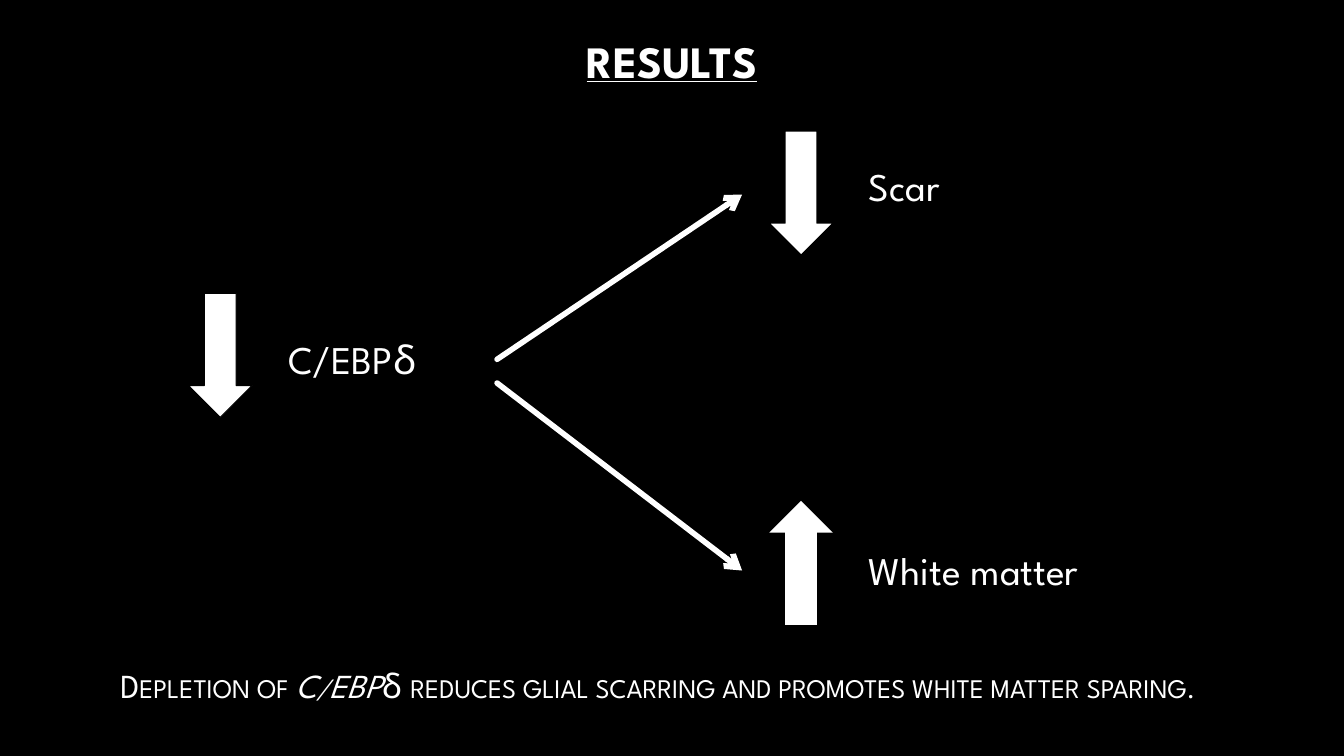
"""Build the results slide: one cause leading to two outcomes, with a conclusion."""
import collections

import lxml.etree
import pptx
import pptx.dml.color
import pptx.enum.shapes
import pptx.enum.text
import pptx.oxml
import pptx.oxml.ns
import pptx.util

WHITE = pptx.dml.color.RGBColor(0xFF, 0xFF, 0xFF)
BLACK = pptx.dml.color.RGBColor(0x00, 0x00, 0x00)
FONT = "League Spartan"
SLIDE_WIDTH, SLIDE_HEIGHT = 13.33, 7.5
ARROW_WIDTH, ARROW_HEIGHT = 0.63, 1.23
LABEL_HEIGHT = 0.57
OUTCOME_LEFT = 7.63
LABEL_GAP = 0.89
CENTER = pptx.enum.text.PP_ALIGN.CENTER
LEFT = pptx.enum.text.PP_ALIGN.LEFT
DOWN = pptx.enum.shapes.MSO_SHAPE.DOWN_ARROW
UP = pptx.enum.shapes.MSO_SHAPE.UP_ARROW

Box = collections.namedtuple("Box", "left top width height")


def inches(*lengths):
    """Convert lengths in inches to slide units."""
    return [pptx.util.Inches(length) for length in lengths]


def add_text(slide, box, runs, size, alignment=CENTER):
    """Place one paragraph of (text, styles) runs in a box."""
    shape = slide.shapes.add_textbox(*inches(*box))
    frame = shape.text_frame
    frame.word_wrap = True
    frame.vertical_anchor = pptx.enum.text.MSO_ANCHOR.TOP
    paragraph = frame.paragraphs[0]
    paragraph.alignment = alignment
    for text, styles in runs:
        run = paragraph.add_run()
        run.text = text
        run.font.name = FONT
        run.font.size = pptx.util.Pt(size)
        run.font.color.rgb = WHITE
        run.font.bold = "bold" in styles
        run.font.italic = "italic" in styles
        run.font.underline = "underline" in styles
        if "small caps" in styles:
            run.font._element.set("cap", "small")
    return shape


def add_change(slide, box, direction, text, label_left, label_top, alignment=LEFT):
    """Place a change arrow at the box's top left and its label inside the box."""
    arrow = slide.shapes.add_shape(
        direction, *inches(box.left, box.top, ARROW_WIDTH, ARROW_HEIGHT))
    arrow.shadow.inherit = False
    arrow.fill.solid()
    arrow.fill.fore_color.rgb = WHITE
    if direction == UP:
        arrow.line.fill.background()
    else:
        arrow.line.color.rgb = BLACK
        arrow.line.width = pptx.util.Pt(0.75)
    label_box = Box(box.left + label_left, box.top + label_top,
                    box.width - label_left, LABEL_HEIGHT)
    return add_text(slide, label_box, [(text, ())], 28, alignment)


def add_arrow(slide, start, end):
    """Draw a thick round-ended line with an open arrowhead."""
    connector = slide.shapes.add_connector(
        pptx.enum.shapes.MSO_CONNECTOR.STRAIGHT, *inches(*start, *end))
    connector.line.color.rgb = WHITE
    connector.line.width = pptx.util.Pt(4)
    line = connector.line._get_or_add_ln()
    line.set("cap", "rnd")
    lxml.etree.SubElement(line, pptx.oxml.ns.qn("a:tailEnd"), type="arrow")
    lxml.etree.SubElement(connector._element.spPr, pptx.oxml.ns.qn("a:effectLst"))
    return connector


def add_diagram(slide, box):
    """Place the cause on the left of the box and its two outcomes on the right."""
    outcome_left = box.left + OUTCOME_LEFT
    cause = add_change(slide, Box(box.left + 1.87, box.top + 1.61, 3.06, ARROW_HEIGHT),
                       DOWN, "C/EBPδ", 0.19, 0.37, CENTER)
    add_change(slide, Box(outcome_left, box.top, 1.93, ARROW_HEIGHT),
               DOWN, "Scar", LABEL_GAP, 0.26)
    add_change(slide, Box(outcome_left, box.top + 3.67, 3.55, ARROW_HEIGHT),
               UP, "White matter", LABEL_GAP, 0.4)
    start, end = box.left + 4.93, box.left + 7.36
    to_scar = add_arrow(slide, (start, box.top + 2.26), (end, box.top + 0.63))
    to_scar.begin_connect(cause, 3)
    add_arrow(slide, (start, box.top + 2.5), (end, box.top + 4.36))


def add_conclusion(slide, box):
    """Write the concluding sentence in small capitals."""
    runs = [
        ("Depletion of ", ("small caps",)),
        ("C/EBP", ("small caps", "italic")),
        ("δ ", ()),
        ("reduces glial scarring and promotes white matter sparing.", ("small caps",)),
    ]
    add_text(slide, box, runs, 24)


def main():
    """Create the presentation and save it."""
    presentation = pptx.Presentation()
    presentation.slide_width, presentation.slide_height = inches(SLIDE_WIDTH, SLIDE_HEIGHT)
    slide = presentation.slides.add_slide(presentation.slide_layouts[6])
    slide.background.fill.solid()
    slide.background.fill.fore_color.rgb = BLACK
    add_text(slide, Box(1.25, 0.29, 10.83, 0.9), [("RESULTS", ("bold", "underline"))], 32)
    add_conclusion(slide, Box(0, 6.55, 13.05, SLIDE_HEIGHT - 6.55))
    add_diagram(slide, Box(0, 1.3, SLIDE_WIDTH, 4.9))
    presentation.save("out.pptx")


if __name__ == "__main__":
    main()
